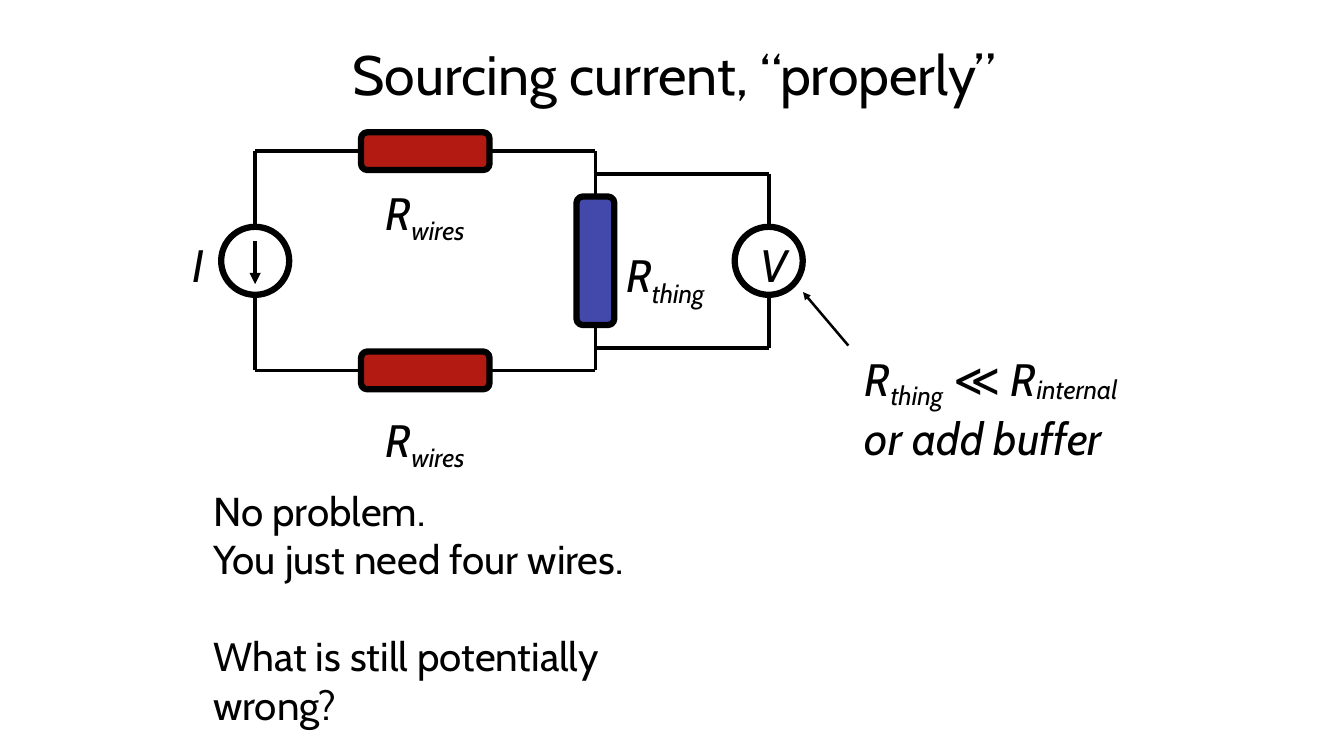
import dataclasses
from typing import Optional, Union

import lxml.etree
import pptx
import pptx.dml.color
import pptx.enum.shapes
import pptx.enum.text
import pptx.oxml.ns
import pptx.shapes.autoshape
import pptx.shapes.connector
import pptx.shapes.shapetree
import pptx.util

Pt = pptx.util.Pt
Shapes = pptx.shapes.shapetree.SlideShapes
Autoshape = pptx.shapes.autoshape.Shape
KINDS = pptx.enum.shapes.MSO_SHAPE


@dataclasses.dataclass(frozen=True)
class Theme:
    font: str = "Cabin"
    ink: str = "000000"
    wire_resistor: str = "B31B12"
    thing_resistor: str = "4349AA"
    title: float = 44
    body: float = 32
    label: float = 36
    outline: float = 5
    wire: float = 3
    pointer: float = 2
    inset: float = 4.3
    indent: float = 3


@dataclasses.dataclass(frozen=True)
class Component:
    x: float
    y: float
    width: float
    height: float
    fill: Optional[str] = None


@dataclasses.dataclass(frozen=True)
class Pin:
    component: str
    site: int


Joint = Union[tuple[float, float], Pin]


@dataclasses.dataclass(frozen=True)
class Wire:
    begin: Joint
    end: Joint
    width: float
    arrow: bool = False


@dataclasses.dataclass(frozen=True)
class Piece:
    text: str
    baseline: int = 0


@dataclasses.dataclass(frozen=True)
class Label:
    left: float
    top: float
    width: float
    height: float
    size: float
    lines: list[list[Piece]]
    italic: bool = True
    centred: bool = False
    gap_before_last: float = 0


THEME = Theme()
SOURCE_X, RESISTOR_X, THING_X, METER_X = 202.5, 337.5, 472.5, 610
MIDDLE, LOOP_RISE, TAP_RISE = 207, 87, 69
LENGTH, THICKNESS, DIAMETER = 102, 30, 54
TOP_SITE, LEFT_SITE, BOTTOM_SITE, RIGHT_SITE = range(4)

COMPONENTS = {
    "source": Component(SOURCE_X, MIDDLE, DIAMETER, DIAMETER),
    "meter": Component(METER_X, MIDDLE, DIAMETER, DIAMETER),
    "upper": Component(RESISTOR_X, MIDDLE - LOOP_RISE, LENGTH, THICKNESS, THEME.wire_resistor),
    "lower": Component(RESISTOR_X, MIDDLE + LOOP_RISE, LENGTH, THICKNESS, THEME.wire_resistor),
    "thing": Component(THING_X, MIDDLE, THICKNESS, LENGTH, THEME.thing_resistor),
}

R_WIRES = [[Piece("R"), Piece("wires", -23)]]
LABELS = [
    Label(227.5, 25, 612, 66, THEME.title, [[Piece("Sourcing current, “properly”")]],
          italic=False, centred=True),
    Label(162, 381.6, 410, 163.4, THEME.body,
          [[Piece("No problem.")], [Piece("You just need four wires.")],
           [Piece("What is still potentially wrong?")]],
          italic=False, gap_before_last=38.5),
    Label(298.8, 142.5, 90, 52, THEME.label, R_WIRES),
    Label(298.8, 322.5, 90, 52, THEME.label, R_WIRES),
    Label(489.6, 192.2, 78, 52, THEME.label, [[Piece("R"), Piece("thing", -23)]]),
    Label(145.4, 183.6, 23, 52, THEME.label, [[Piece("I")]]),
    Label(596.2, 183.6, 33, 52, THEME.label, [[Piece("V")]]),
    Label(679, 274.3, 222, 95, THEME.label,
          [[Piece("R"), Piece("thing", -19), Piece(" ≪ R"), Piece("internal", -6)],
           [Piece("or add buffer")]]),
]


def circuit_wires() -> list[Wire]:
    """Return the wires of both halves of the circuit and its two arrows."""
    joints: list[tuple[Joint, Joint]] = []
    for sign, resistor, thing_site in ((-1, "upper", TOP_SITE), (1, "lower", BOTTOM_SITE)):
        loop, tap = MIDDLE + sign * LOOP_RISE, MIDDLE + sign * TAP_RISE
        rim = MIDDLE + sign * DIAMETER / 2
        joints += [
            ((SOURCE_X, rim), (SOURCE_X, loop)),
            ((SOURCE_X, loop), Pin(resistor, LEFT_SITE)),
            (Pin(resistor, RIGHT_SITE), (THING_X, loop)),
            ((THING_X, loop), Pin("thing", thing_site)),
            ((THING_X, tap), (METER_X, tap)),
            ((METER_X, tap), (METER_X, rim)),
        ]
    wires = [Wire(begin, end, THEME.wire) for begin, end in joints]
    current = Wire((SOURCE_X, 191.5), (SOURCE_X, 225.5), THEME.wire, arrow=True)
    pointer = Wire((673.2, 274.3), (637.2, 231.8), THEME.pointer, arrow=True)
    return wires + [current, pointer]


def colour(value: str) -> pptx.dml.color.RGBColor:
    """Turn a hex string into a colour."""
    return pptx.dml.color.RGBColor.from_string(value)


def draw_component(shapes: Shapes, component: Component) -> Autoshape:
    """Draw a resistor, or a circle when the component has no fill."""
    kind = KINDS.ROUNDED_RECTANGLE if component.fill else KINDS.OVAL
    shape = shapes.add_shape(kind, Pt(component.x - component.width / 2),
                             Pt(component.y - component.height / 2),
                             Pt(component.width), Pt(component.height))
    shape.shadow.inherit = False
    shape.line.color.rgb = colour(THEME.ink)
    shape.line.width = Pt(THEME.outline)
    if component.fill:
        shape.fill.solid()
        shape.fill.fore_color.rgb = colour(component.fill)
    else:
        shape.fill.background()
    return shape


def draw_wire(shapes: Shapes, wire: Wire, drawn: dict[str, Autoshape]) -> None:
    """Draw a straight wire and join its pinned ends to their components."""
    begin, end = ((0, 0) if isinstance(joint, Pin) else joint for joint in (wire.begin, wire.end))
    line = shapes.add_connector(pptx.enum.shapes.MSO_CONNECTOR.STRAIGHT,
                                Pt(begin[0]), Pt(begin[1]), Pt(end[0]), Pt(end[1]))
    for joint, connect in ((wire.begin, line.begin_connect), (wire.end, line.end_connect)):
        if isinstance(joint, Pin):
            connect(drawn[joint.component], joint.site)
    line.line.color.rgb = colour(THEME.ink)
    line.line.width = Pt(wire.width)
    properties = line._element.spPr
    if wire.arrow:
        outline = properties.find(pptx.oxml.ns.qn("a:ln"))
        lxml.etree.SubElement(outline, pptx.oxml.ns.qn("a:tailEnd"), type="triangle")
    lxml.etree.SubElement(properties, pptx.oxml.ns.qn("a:effectLst"))


def draw_label(shapes: Shapes, label: Label) -> None:
    """Draw a text box with its lines and subscripts."""
    frame = shapes.add_textbox(Pt(label.left), Pt(label.top),
                               Pt(label.width), Pt(label.height)).text_frame
    frame.word_wrap = True
    frame.margin_left = Pt(THEME.inset + THEME.indent)
    frame.margin_right = frame.margin_top = frame.margin_bottom = Pt(THEME.inset)
    if label.centred:
        frame.vertical_anchor = pptx.enum.text.MSO_ANCHOR.MIDDLE
    for index, pieces in enumerate(label.lines):
        paragraph = frame.add_paragraph() if index else frame.paragraphs[0]
        if label.centred:
            paragraph.alignment = pptx.enum.text.PP_ALIGN.CENTER
        for piece in pieces:
            run = paragraph.add_run()
            run.text = piece.text
            run.font.name = THEME.font
            run.font.size = Pt(label.size)
            run.font.italic = label.italic
            run.font.color.rgb = colour(THEME.ink)
            if piece.baseline:
                run._r.get_or_add_rPr().set("baseline", str(piece.baseline * 1000))
    if label.gap_before_last:
        frame.paragraphs[-1].space_before = Pt(label.gap_before_last)


def main() -> None:
    """Build the slide and save it."""
    deck = pptx.Presentation()
    deck.slide_width, deck.slide_height = Pt(1066.5), Pt(600)
    shapes = deck.slides.add_slide(deck.slide_layouts[6]).shapes
    drawn = {name: draw_component(shapes, component) for name, component in COMPONENTS.items()}
    for wire in circuit_wires():
        draw_wire(shapes, wire, drawn)
    for label in LABELS:
        draw_label(shapes, label)
    deck.save("out.pptx")


if __name__ == "__main__":
    main()
